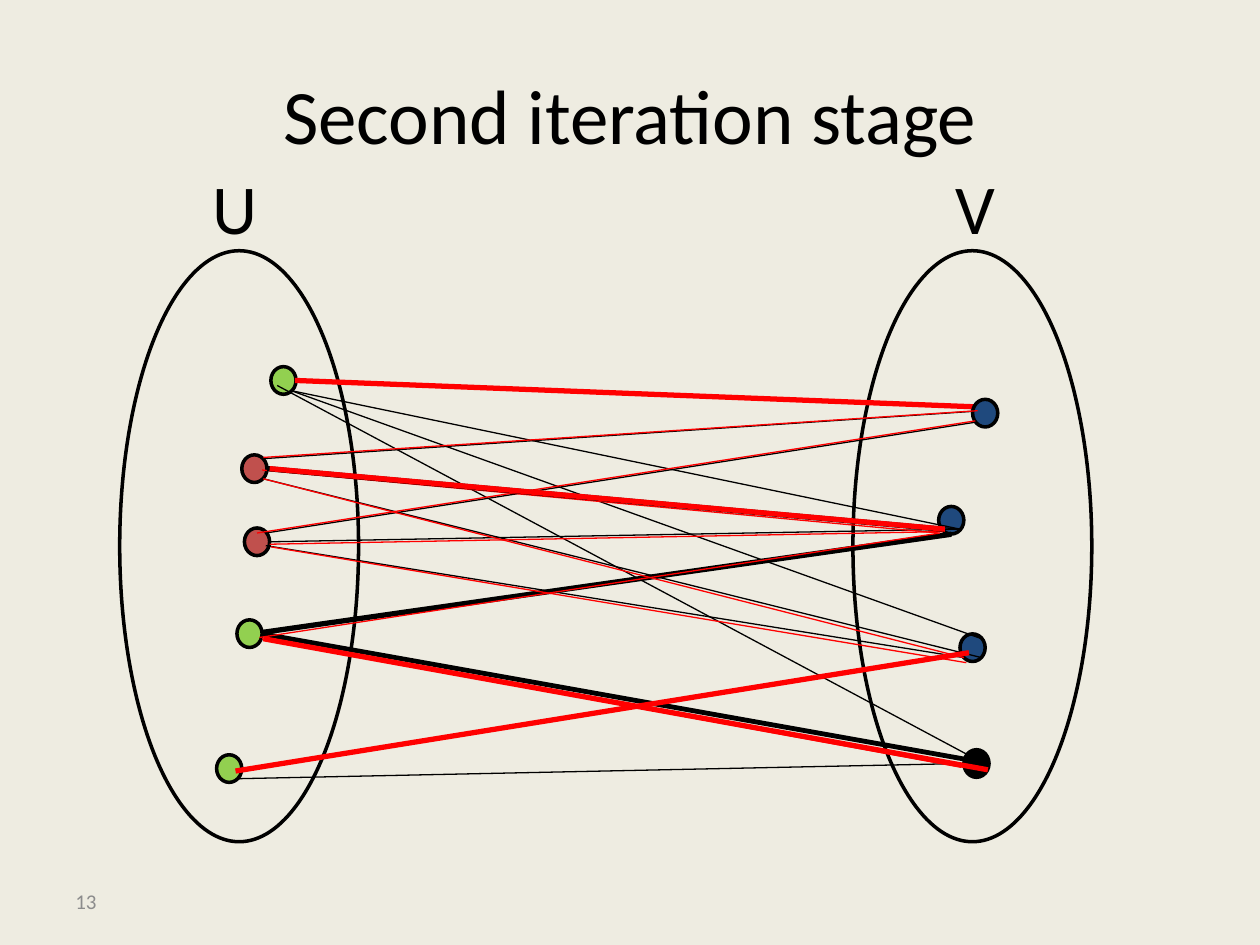
from dataclasses import dataclass

from lxml.etree import SubElement
from pptx import Presentation
from pptx.dml.color import RGBColor
from pptx.enum.shapes import MSO_CONNECTOR, MSO_SHAPE
from pptx.enum.text import MSO_ANCHOR, PP_ALIGN
from pptx.oxml.ns import qn
from pptx.util import Pt


@dataclass(frozen=True)
class Theme:
    font: str = "Calibri"
    background: str = "EEECE1"
    ink: str = "000000"
    red: str = "FF0000"
    green: str = "92D050"
    brick: str = "C0504D"
    blue: str = "1F497D"
    muted: str = "8C8C8C"
    title_size: float = 44
    label_size: float = 40
    number_size: float = 12
    outline: float = 2
    thin: float = 0.75
    medium: float = 2.75
    thick: float = 3
    node_width: float = 14.4
    node_height: float = 15.8


class GraphSlide:
    def __init__(self, slide, theme):
        self.slide = slide
        self.theme = theme
        backdrop = slide.background.fill
        backdrop.solid()
        backdrop.fore_color.rgb = RGBColor.from_string(theme.background)

    def text(self, words, left, top, width, height, size, color=None,
             align=PP_ALIGN.LEFT, anchor=MSO_ANCHOR.MIDDLE):
        box = self.slide.shapes.add_textbox(Pt(left), Pt(top), Pt(width), Pt(height))
        frame = box.text_frame
        frame.word_wrap = True
        frame.vertical_anchor = anchor
        frame.text = words
        paragraph = frame.paragraphs[0]
        paragraph.alignment = align
        font = paragraph.runs[0].font
        font.name = self.theme.font
        font.size = Pt(size)
        font.color.rgb = RGBColor.from_string(color or self.theme.ink)

    def outlined(self, preset, left, top, width, height, color=None):
        shape = self.slide.shapes.add_shape(
            preset, Pt(left), Pt(top), Pt(width), Pt(height))
        shape.shadow.inherit = False
        if color:
            shape.fill.solid()
            shape.fill.fore_color.rgb = RGBColor.from_string(color)
        else:
            shape.fill.background()
        shape.line.color.rgb = RGBColor.from_string(self.theme.ink)
        shape.line.width = Pt(self.theme.outline)

    def vertex_set(self, left, top, width, height):
        self.outlined(MSO_SHAPE.OVAL, left, top, width, height)

    def node(self, left, top, color):
        self.outlined(MSO_SHAPE.FLOWCHART_CONNECTOR, left, top,
                      self.theme.node_width, self.theme.node_height, color)

    def edge(self, x1, y1, x2, y2, color, width):
        line = self.slide.shapes.add_connector(
            MSO_CONNECTOR.STRAIGHT, Pt(x1), Pt(y1), Pt(x2), Pt(y2))
        line.line.color.rgb = RGBColor.from_string(color)
        line.line.width = Pt(width)
        SubElement(line._element.spPr, qn("a:effectLst"))


def main():
    theme = Theme()
    deck = Presentation()
    deck.slide_width, deck.slide_height = Pt(720), Pt(540)
    graph = GraphSlide(deck.slides.add_slide(deck.slide_layouts[6]), theme)

    # Title
    graph.text("Second iteration stage", 36, 20.2, 648, 90, theme.title_size,
               align=PP_ALIGN.CENTER)

    # The two vertex sets and their labels
    for name, set_left, label_left in (("U", 68.4, 108.7), ("V", 487.4, 530.6)):
        graph.vertex_set(set_left, 143.3, 136.5, 337.7)
        graph.text(name, label_left, 90.7, 45.4, 55.4, theme.label_size,
                   align=PP_ALIGN.RIGHT, anchor=MSO_ANCHOR.TOP)

    # Vertices below the edges
    nodes = [
        (154.8, 209.5, theme.green),
        (138.2, 259.9, theme.brick),
        (139.7, 301.7, theme.brick),
        (135.4, 354.2, theme.green),
        (123.8, 431.3, theme.green),
        (536.4, 289.4, theme.blue),
        (548.6, 362.2, theme.blue),
        (550.8, 428.4, theme.ink),
    ]
    for node in nodes:
        graph.node(*node)

    # Edges of the graph
    thin_black = (theme.ink, theme.thin)
    thin_red = (theme.red, theme.thin)
    thick_black = (theme.ink, theme.thick)
    thick_red = (theme.red, theme.thick)
    graph_edges = [
        (166.3, 223.2, 548.6, 302.4, *thin_black),
        (150.5, 262.1, 561.6, 234.7, *thin_black),
        (150.5, 273.6, 560.9, 375.8, *thin_black),
        (135.4, 445, 550.8, 436.3, *thin_black),
        (149.8, 362.2, 565.2, 436.3, theme.ink, theme.medium),
        (166.3, 223.2, 560.9, 365, *thin_black),
        (158.4, 220.3, 553, 431.3, *thin_black),
        (151.9, 311.8, 550.8, 375.8, *thin_black),
        (152.6, 267.8, 548.6, 302.4, *thin_black),
        (151.9, 304.6, 562.3, 240.5, *thin_black),
        (548.6, 302.4, 154.1, 309.6, *thin_black),
        (168.5, 217.4, 560.2, 232.6, *thick_red),
        (149.8, 361.4, 543.6, 305.3, *thick_black),
        (134.6, 440.6, 553.7, 373, *thick_red),
    ]
    for edge in graph_edges:
        graph.edge(*edge)

    # Top vertex of V covers the edge ends
    graph.node(555.8, 228.2, theme.blue)

    # Edges of the second iteration
    iteration_edges = [
        (150.5, 261.4, 558.7, 234.7, *thin_red),
        (146.9, 304.6, 557.3, 240.5, *thin_red),
        (149.8, 268.6, 536.4, 304.6, *thin_red),
        (538.6, 303.8, 154.1, 311, *thin_red),
        (154.8, 312.5, 552.2, 378.7, *thin_red),
        (150.5, 273.6, 550.8, 375.8, *thin_red),
        (149.8, 365, 549.4, 438.5, *thin_red),
        (152.6, 267.8, 538.6, 302.4, *thick_black),
        (537.1, 304.6, 148.3, 364.3, *thin_red),
        (154.1, 267.8, 540, 302.4, *thick_red),
        (150.5, 365, 564.5, 439.9, *thick_red),
    ]
    for edge in iteration_edges:
        graph.edge(*edge)

    # Slide number
    graph.text("13", 36, 500.4, 167.8, 28.8, theme.number_size, theme.muted)

    deck.save("out.pptx")


if __name__ == "__main__":
    main()
